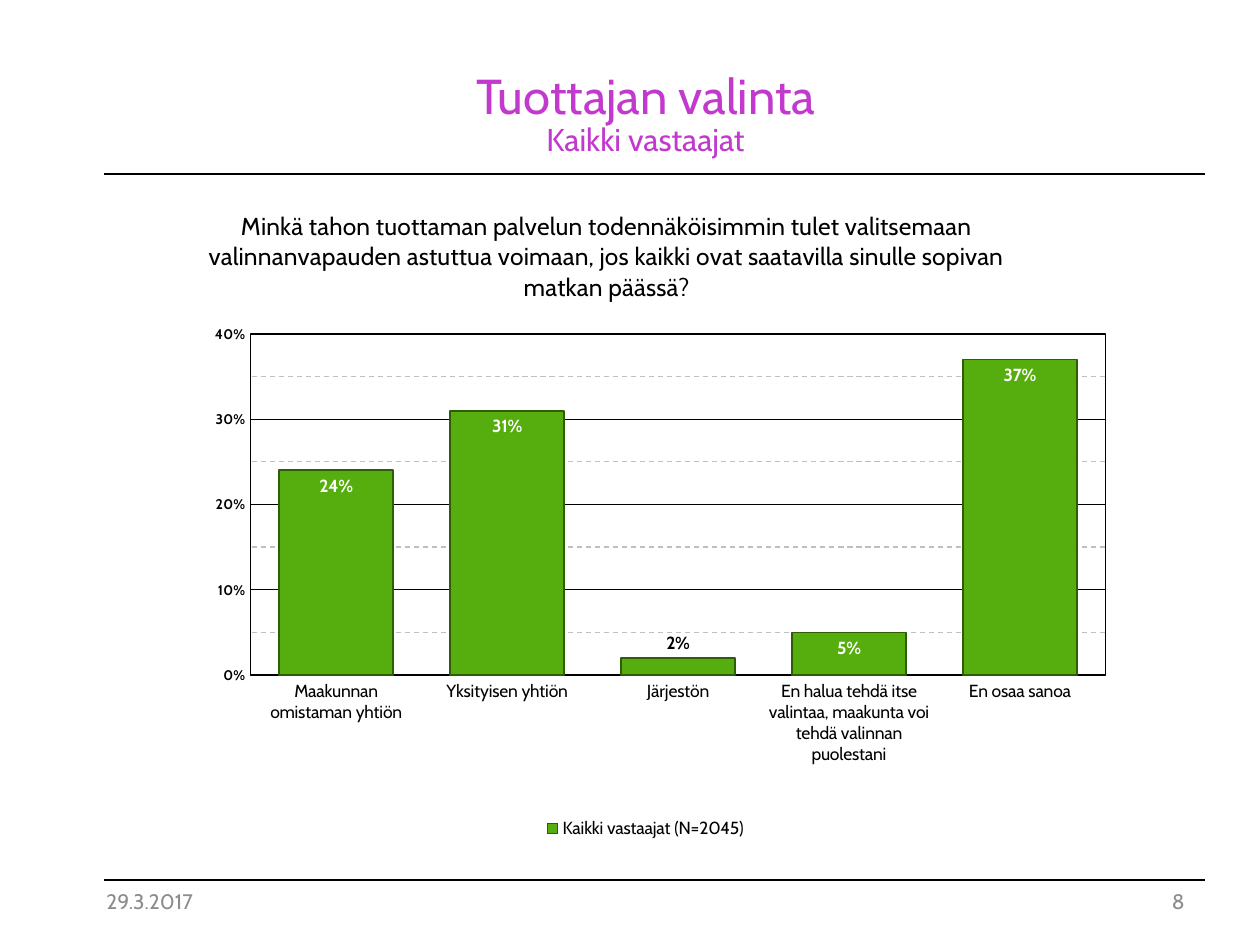
from lxml.etree import SubElement
from pptx import Presentation
from pptx.chart.data import CategoryChartData
from pptx.dml.color import RGBColor
from pptx.enum.chart import XL_CHART_TYPE as ChartType, XL_LABEL_POSITION as LabelPos
from pptx.enum.chart import XL_LEGEND_POSITION as LegendPos, XL_TICK_MARK as TickMark
from pptx.enum.shapes import MSO_CONNECTOR as Connector
from pptx.enum.text import MSO_ANCHOR as Anchor, PP_ALIGN as Align
from pptx.oxml import parse_xml
from pptx.oxml.ns import nsdecls, qn
from pptx.util import Pt

EMU_PER_PX = 914400 / 126
FONT = "Cabin"
COLORS = {"ink": "000000", "title": "C239CE", "footer": "8C8C8C", "bar": "56AE0E",
          "bar_edge": "2E5D07", "minor_grid": "BFBFBF", "bar_label": "FFFFFF"}
QUESTION = ("Minkä tahon tuottaman palvelun todennäköisimmin tulet valitsemaan "
            "valinnanvapauden astuttua voimaan, jos kaikki ovat saatavilla "
            "sinulle sopivan matkan päässä?")
SHARES = {
    "Maakunnan omistaman yhtiön": 0.24,
    "Yksityisen yhtiön": 0.31,
    "Järjestön": 0.02,
    "En halua tehdä itse valintaa, maakunta voi tehdä valinnan puolestani": 0.05,
    "En osaa sanoa": 0.37,
}


def px(*lengths):
    return [round(length * EMU_PER_PX) for length in lengths]


def rgb(name):
    return RGBColor.from_string(COLORS[name])


def style_font(font, size, color, bold=False):
    font.name, font.size, font.bold = FONT, Pt(size), bold
    font.color.rgb = rgb(color)


def style_line(line, color, width):
    line.color.rgb = rgb(color)
    line.width = Pt(width)


def add_text(slide, box, lines, color, align, anchor, spacing=1.0):
    frame = slide.shapes.add_textbox(*px(*box)).text_frame
    frame.word_wrap = True
    frame.vertical_anchor = anchor
    paragraph = frame.paragraphs[0]
    paragraph.alignment, paragraph.line_spacing = align, spacing
    for index, (text, size) in enumerate(lines):
        if index:
            paragraph.add_line_break()
        run = paragraph.add_run()
        run.text = text
        style_font(run.font, size, color)


def add_rule(slide, y):
    rule = slide.shapes.add_connector(Connector.STRAIGHT, *px(104, y, 1205, y))
    style_line(rule.line, "ink", 0.75)
    SubElement(rule._element.spPr, qn("a:effectLst"))


def manual_layout(target, **parts):
    """Build a manual layout whose parts are fractions of the chart."""
    for old in target.findall(qn("c:layout")):
        target.remove(old)
    layout = parse_xml(f"<c:layout {nsdecls('c')}><c:manualLayout/></c:layout>")
    if "w" in parts:
        SubElement(layout[0], qn("c:layoutTarget"), val="inner")
    for mode in ("xMode", "yMode"):
        SubElement(layout[0], qn(f"c:{mode}"), val="edge")
    for part, share in parts.items():
        SubElement(layout[0], qn(f"c:{part}"), val=str(share))
    return layout


def outline(color, dash="solid"):
    return parse_xml(
        f'<c:spPr {nsdecls("c", "a")}><a:noFill/><a:ln w="{Pt(0.75)}"><a:solidFill>'
        f'<a:srgbClr val="{COLORS[color]}"/></a:solidFill>'
        f'<a:prstDash val="{dash}"/></a:ln></c:spPr>')


def style_title(chart):
    title = chart.chart_title
    run = title.text_frame.paragraphs[0].add_run()
    run.text = QUESTION
    style_font(run.font, 14, "ink")
    layout = manual_layout(title._element, x=0.1, y=0.03)
    title._element.find(qn("c:tx")).addnext(layout)


def style_plot_area(chart):
    area = chart.element.find(".//" + qn("c:plotArea"))
    area.insert(0, manual_layout(area, x=0.142, y=0.226, w=0.775, h=0.518))
    area.append(outline("ink"))


def style_axes(chart):
    answers, percent = chart.category_axis, chart.value_axis
    for axis, size, bold in ((answers, 10, False), (percent, 8, True)):
        axis.major_tick_mark = axis.minor_tick_mark = TickMark.NONE
        style_font(axis.tick_labels.font, size, "ink", bold)
    style_line(answers.format.line, "ink", 0.75)
    percent.format.line.fill.background()
    percent.minimum_scale, percent.maximum_scale = 0, 0.4
    percent.major_unit, percent.minor_unit = 0.1, 0.05
    percent.tick_labels.number_format = "0%"
    percent.tick_labels.number_format_is_linked = False
    percent.has_major_gridlines = percent.has_minor_gridlines = True
    style_line(percent.major_gridlines.format.line, "ink", 0.75)
    minor_grid = chart.element.find(".//" + qn("c:minorGridlines"))
    minor_grid.append(outline("minor_grid", "dash"))


def style_bars(chart):
    plot = chart.plots[0]
    plot.gap_width, plot.vary_by_categories = 50, False
    bars = plot.series[0]
    bars.format.fill.solid()
    bars.format.fill.fore_color.rgb = rgb("bar")
    style_line(bars.format.line, "bar_edge", 1)
    labels = bars.data_labels
    labels.show_value = True
    labels.number_format, labels.number_format_is_linked = "0%", False
    labels.position = LabelPos.INSIDE_END
    style_font(labels.font, 10, "bar_label", True)
    low_label = bars.points[2].data_label
    style_font(low_label.font, 10, "ink", True)
    low_label.position = LabelPos.OUTSIDE_END


def add_survey_chart(slide):
    survey = CategoryChartData(number_format="0%")
    survey.categories = list(SHARES)
    survey.add_series("Kaikki vastaajat (N=2045)", list(SHARES.values()))
    chart = slide.shapes.add_chart(
        ChartType.COLUMN_CLUSTERED, *px(94, 185, 1103, 659), survey).chart
    style_font(chart.font, 10, "ink")
    style_title(chart)
    style_plot_area(chart)
    style_axes(chart)
    style_bars(chart)
    chart.has_legend = True
    chart.legend.position = LegendPos.BOTTOM
    chart.legend.include_in_layout = False
    style_font(chart.legend.font, 10, "ink")


def main():
    deck = Presentation()
    deck.slide_width, deck.slide_height = px(1260, 945)
    slide = deck.slides.add_slide(deck.slide_layouts[6])
    for y in (174, 880):
        add_rule(slide, y)
    add_text(slide, (94, 29, 1103, 136),
             [("Tuottajan valinta", 28), ("Kaikki vastaajat", 18)],
             "title", Align.CENTER, Anchor.BOTTOM, 0.9)
    add_text(slide, (94, 876, 263, 50), [("29.3.2017", 12)],
             "footer", Align.LEFT, Anchor.MIDDLE)
    add_text(slide, (903, 876, 294, 50), [("8", 12)],
             "footer", Align.RIGHT, Anchor.MIDDLE)
    add_survey_chart(slide)
    deck.save("out.pptx")


if __name__ == "__main__":
    main()
